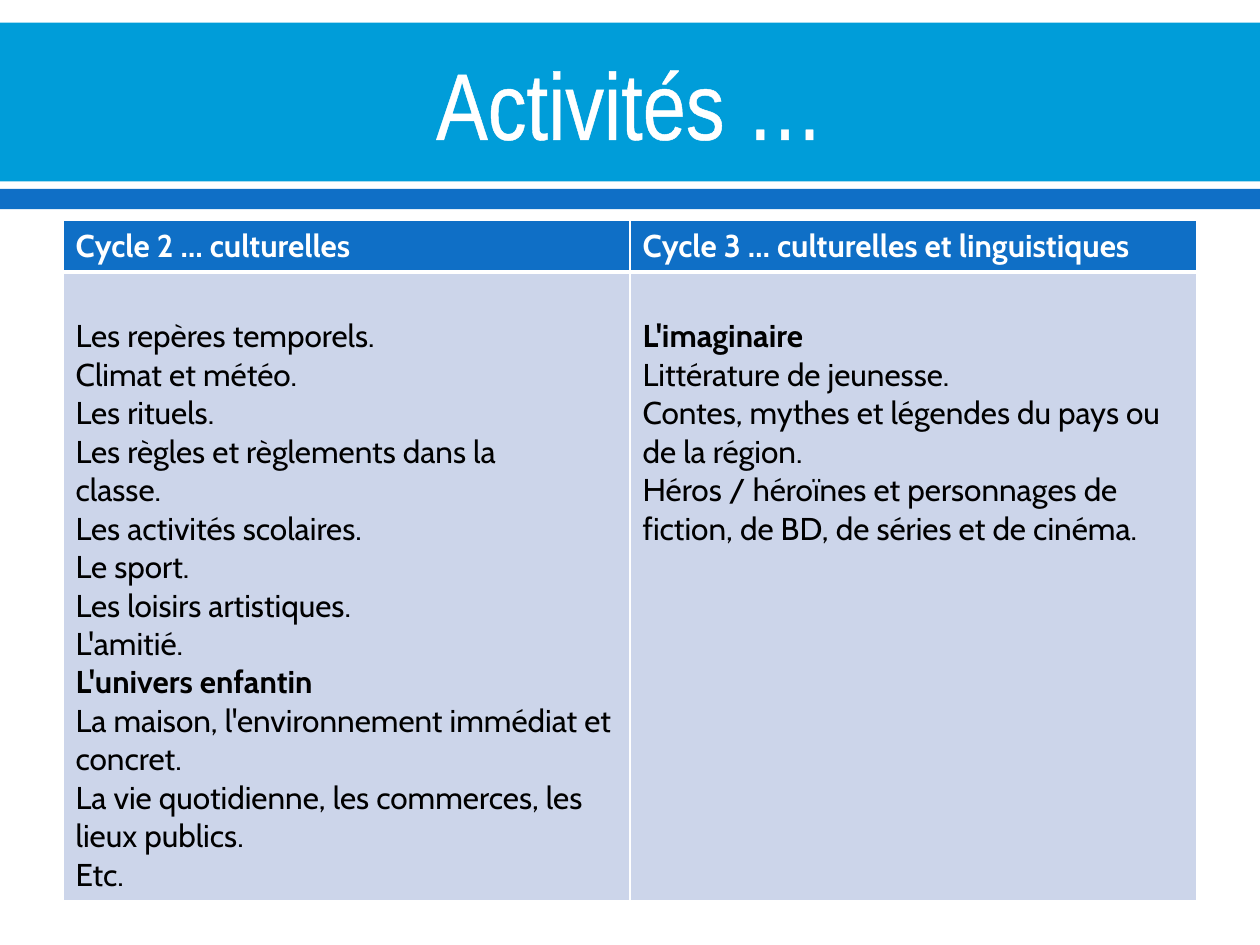
"""Build a slide that sets the activities of two school cycles side by side."""
import pptx
import pptx.dml.color
import pptx.enum.shapes
import pptx.enum.text
import pptx.oxml
import pptx.util
from pptx.util import Inches

TITLE = "Activités …"
HEADS = ["Cycle 2 … culturelles", "Cycle 3 … culturelles et linguistiques"]
LISTS = [
    [
        "Les repères temporels.",
        "Climat et météo.",
        "Les rituels.",
        "Les règles et règlements dans la",
        "classe.",
        "Les activités scolaires.",
        "Le sport.",
        "Les loisirs artistiques.",
        "L'amitié.",
        "L'univers enfantin",
        "La maison, l'environnement immédiat et",
        "concret.",
        "La vie quotidienne, les commerces, les lieux publics.",
        "Etc.",
    ],
    [
        "L'imaginaire",
        "Littérature de jeunesse.",
        "Contes, mythes et légendes du pays ou",
        "de la région.",
        "Héros / héroïnes et personnages de fiction, de BD, de séries et de cinéma.",
    ],
]
THEMES = {"L'univers enfantin", "L'imaginaire"}
BANDS = [(0.18, 1.26, "sky"), (1.5, 0.16, "blue")]
ROWS = [0.41, 4.97]
WIDE, TALL, SIDE, TOP = 10, 7.5, 0.5, 1.75
THEME = {
    "sky": "009DD9", "blue": "0F6FC6", "pale": "CCD5EA",
    "white": "FFFFFF", "black": "000000",
    "head": "Arial Narrow", "body": "Cabin", "big": 54, "small": 18,
}


def tint(name):
    return pptx.dml.color.RGBColor.from_string(THEME[name])


def paint(fill, name):
    fill.solid()
    fill.fore_color.rgb = tint(name)


def line(tag, width):
    return pptx.oxml.parse_xml(
        f'<a:{tag} xmlns:a="http://schemas.openxmlformats.org/drawingml/2006/main" '
        f'w="{pptx.util.Pt(width)}"><a:solidFill><a:srgbClr val="{THEME["white"]}"/>'
        f'</a:solidFill></a:{tag}>'
    )


def write(par, text, face="body", size="small", hue="black", bold=False, align=None):
    run = par.add_run()
    run.text = text
    run.font.name = THEME[face]
    run.font.size = pptx.util.Pt(THEME[size])
    run.font.color.rgb = tint(hue)
    run.font.bold = bold
    par.alignment = align
    return run


def add_bands(slide):
    for spot, (top, tall, hue) in enumerate(BANDS, 2):
        band = slide.shapes.add_shape(
            pptx.enum.shapes.MSO_SHAPE.RECTANGLE,
            0, Inches(top), Inches(WIDE), Inches(tall))
        band.shadow.inherit = False
        band.line.fill.background()
        paint(band.fill, hue)
        slide.shapes._spTree.insert(spot, band._element)


def add_title(slide):
    title = slide.shapes.title
    title.left, title.top = Inches(SIDE), Inches(0.2)
    title.width, title.height = Inches(WIDE - 2 * SIDE), Inches(1.22)
    frame = title.text_frame
    frame.vertical_anchor = pptx.enum.text.MSO_ANCHOR.MIDDLE
    run = write(frame.paragraphs[0], TITLE, face="head", size="big", hue="white",
                align=pptx.enum.text.PP_ALIGN.CENTER)
    run.font._element.insert(0, line("ln", 1.1))


def fill_cell(cell, lines, row):
    paint(cell.fill, "pale" if row else "blue")
    edges = {"lnL": 1, "lnR": 1, "lnT": 1 if row == 0 else 3, "lnB": 1 if row else 3}
    for spot, (tag, width) in enumerate(edges.items()):
        cell._tc.get_or_add_tcPr().insert(spot, line(tag, width))
    if row:
        cell.margin_top = Inches(0.36)
    frame = cell.text_frame
    for spot, text in enumerate(lines):
        par = frame.add_paragraph() if spot else frame.paragraphs[0]
        write(par, text, hue="black" if row else "white",
              bold=row == 0 or text in THEMES)


def add_grid(slide):
    wide = WIDE - 2 * SIDE
    grid = slide.shapes.add_table(
        len(ROWS), len(HEADS), Inches(SIDE), Inches(TOP),
        Inches(wide), Inches(sum(ROWS))).table
    grid.horz_banding = False
    for row, tall in enumerate(ROWS):
        grid.rows[row].height = Inches(tall)
    for col, (head, lines) in enumerate(zip(HEADS, LISTS)):
        grid.columns[col].width = Inches(wide / len(HEADS))
        fill_cell(grid.cell(0, col), [head], 0)
        fill_cell(grid.cell(1, col), lines, 1)


def main():
    deck = pptx.Presentation()
    deck.slide_width, deck.slide_height = Inches(WIDE), Inches(TALL)
    slide = deck.slides.add_slide(deck.slide_layouts[5])
    paint(slide.background.fill, "white")
    add_bands(slide)
    add_title(slide)
    add_grid(slide)
    deck.save("out.pptx")


if __name__ == "__main__":
    main()
